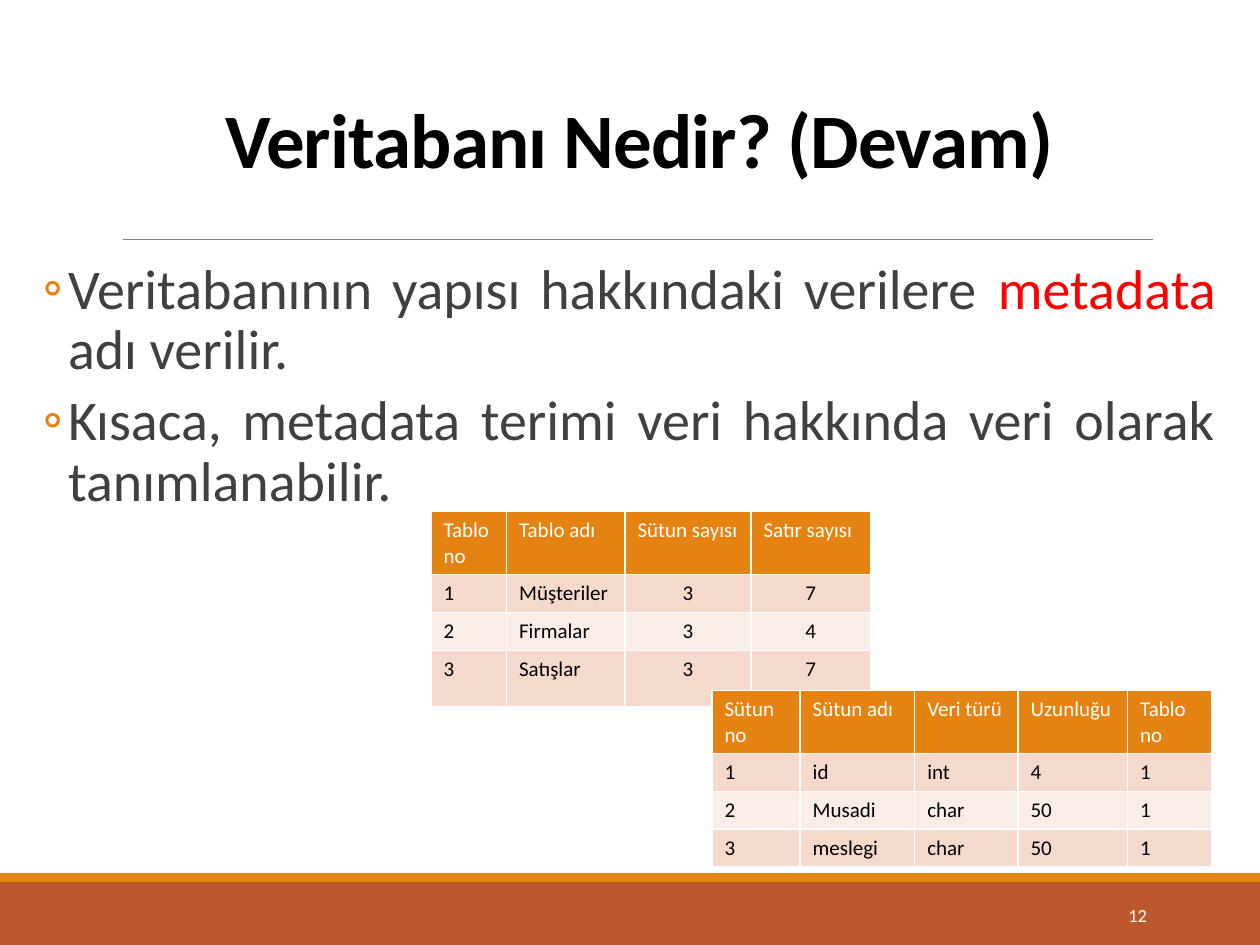
from pptx import Presentation
from pptx.dml.color import RGBColor
from pptx.enum.shapes import MSO_CONNECTOR, MSO_SHAPE
from pptx.enum.text import MSO_ANCHOR, PP_ALIGN
from pptx.oxml.ns import qn
from pptx.util import Inches, Pt
from lxml.etree import SubElement

FONT = "Calibri"
ORANGE, RUST, GRAY = "E48312", "BD582C", "404040"
BANDS = ["F5D9CC", "FAEDE7"]

TABLE_LIST = [
    ["Tablo no", "Tablo adı", "Sütun sayısı", "Satır sayısı"],
    ["1", "Müşteriler", "3", "7"],
    ["2", "Firmalar", "3", "4"],
    ["3", "Satışlar", "3", "7"],
]
COLUMN_LIST = [
    ["Sütun no", "Sütun adı", "Veri türü", "Uzunluğu", "Tablo\nno"],
    ["1", "id", "int", "4", "1"],
    ["2", "Musadi", "char", "50", "1"],
    ["3", "meslegi", "char", "50", "1"],
]
BULLETS = [
    [("Veritabanının yapısı hakkındaki verilere ", GRAY),
     ("metadata ", "FF0000"), ("adı verilir.", GRAY)],
    [("Kısaca, metadata terimi veri hakkında veri olarak tanımlanabilir.", GRAY)],
]


def color(value):
    return RGBColor.from_string(value)


def apply(target, formats):
    for name, value in formats.items():
        setattr(target, name, value)


def add_span(para, text, size, hex_color, bold=False):
    span = para.add_run()
    span.text = text
    apply(span.font, {"name": FONT, "size": Pt(size), "bold": bold})
    span.font.color.rgb = color(hex_color)
    return span


def add_bar(page, top, height, hex_color):
    bar = page.shapes.add_shape(MSO_SHAPE.RECTANGLE, 0, Inches(top),
                                Inches(10), Inches(height))
    bar.shadow.inherit = False
    bar.fill.solid()
    bar.fill.fore_color.rgb = color(hex_color)
    bar.line.fill.background()


def add_rule(page, left, right, top):
    rule = page.shapes.add_connector(MSO_CONNECTOR.STRAIGHT, Inches(left),
                                     Inches(top), Inches(right), Inches(top))
    rule.line.width = Pt(0.5)
    rule.line.color.rgb = color("808080")
    SubElement(rule._element.spPr, qn("a:effectLst"))


def add_box(page, left, top, width, height, **formats):
    box = page.shapes.add_textbox(Inches(left), Inches(top),
                                  Inches(width), Inches(height))
    apply(box.text_frame, {"word_wrap": True, **formats})
    return box.text_frame


def add_bullet(para, spans):
    apply(para, {"alignment": PP_ALIGN.JUSTIFY, "line_spacing": 0.9,
                 "space_before": Pt(2), "space_after": Pt(4)})
    props = para._p.get_or_add_pPr()
    props.set("marL", str(Inches(0.42)))
    props.set("indent", str(Inches(-0.2)))
    bullet_color = SubElement(props, qn("a:buClr"))
    SubElement(bullet_color, qn("a:srgbClr"), val=ORANGE)
    SubElement(props, qn("a:buFont"), typeface=FONT)
    SubElement(props, qn("a:buChar"), char="◦")
    for text, hex_color in spans:
        add_span(para, text, 32, hex_color)


def fill_cell(cell, text, fill, hex_color, alignment):
    cell.fill.solid()
    cell.fill.fore_color.rgb = color(fill)
    frame = cell.text_frame
    for index, line in enumerate(text.split("\n")):
        para = frame.add_paragraph() if index else frame.paragraphs[0]
        para.alignment = alignment
        add_span(para, line, 12, hex_color)


def add_grid(page, left, top, widths, heights, rows, centered=()):
    # The default table style supplies the white cell borders
    table = page.shapes.add_table(len(rows), len(widths), Inches(left), Inches(top),
                                  Inches(sum(widths)), Inches(sum(heights))).table
    for column, width in zip(table.columns, widths):
        column.width = Inches(width)
    for r, (texts, height) in enumerate(zip(rows, heights)):
        table.rows[r].height = Inches(height)
        fill = BANDS[(r - 1) % 2] if r else ORANGE
        for c, text in enumerate(texts):
            alignment = PP_ALIGN.CENTER if r and c in centered else PP_ALIGN.LEFT
            fill_cell(table.cell(r, c), text, fill,
                      "000000" if r else "FFFFFF", alignment)


def main():
    deck = Presentation()
    apply(deck, {"slide_width": Inches(10), "slide_height": Inches(7.5)})
    page = deck.slides.add_slide(deck.slide_layouts[6])

    # Footer bars and title rule
    add_bar(page, 7, 0.5, RUST)
    add_bar(page, 6.93, 0.07, ORANGE)
    add_rule(page, 0.98, 9.15, 1.9)

    # Title
    title = add_box(page, 1.69, 0.76, 6.94, 0.75, vertical_anchor=MSO_ANCHOR.BOTTOM)
    title.paragraphs[0].line_spacing = 0.85
    span = add_span(title.paragraphs[0], "Veritabanı Nedir? (Devam)", 44, "000000", True)
    span.font._element.set("spc", "-50")

    # Bulleted text
    body = add_box(page, 0.12, 2.02, 9.53, 2.68, margin_left=0, margin_right=0)
    for index, spans in enumerate(BULLETS):
        add_bullet(body.add_paragraph() if index else body.paragraphs[0], spans)

    # Page number
    number = add_box(page, 8.12, 7.06, 1.08, 0.4, vertical_anchor=MSO_ANCHOR.MIDDLE)
    number.paragraphs[0].alignment = PP_ALIGN.RIGHT
    add_span(number.paragraphs[0], "12", 10.5, "FFFFFF")

    # Metadata tables
    add_grid(page, 3.42, 4.06, [0.6, 0.94, 1, 0.95], [0.5, 0.3, 0.3, 0.45],
             TABLE_LIST, centered=(2, 3))
    add_grid(page, 5.65, 5.48, [0.7, 0.91, 0.82, 0.87, 0.67], [0.5, 0.3, 0.3, 0.3],
             COLUMN_LIST)

    deck.save("out.pptx")


if __name__ == "__main__":
    main()
